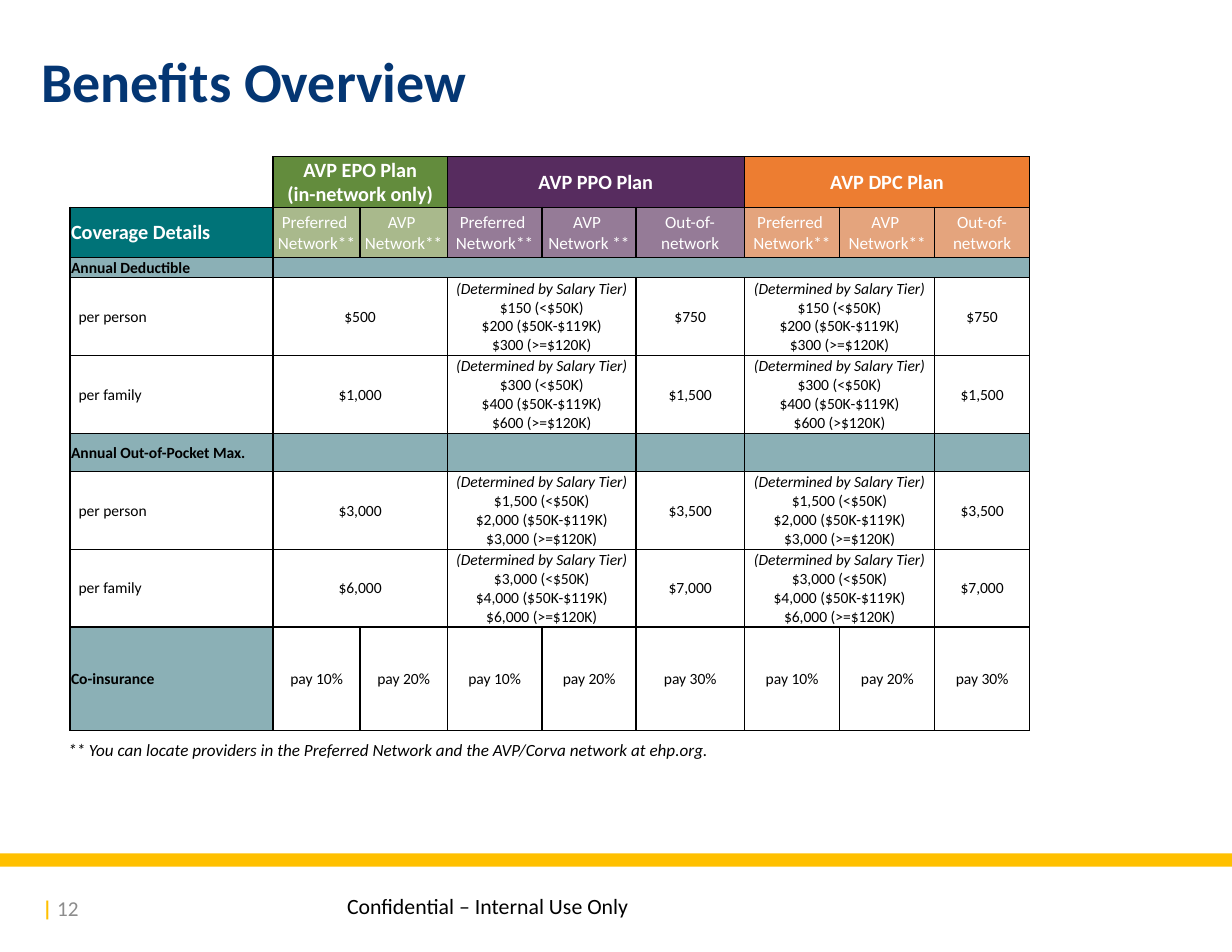
from dataclasses import dataclass

from lxml import etree
from pptx import Presentation
from pptx.dml.color import RGBColor
from pptx.enum.shapes import MSO_SHAPE
from pptx.enum.text import MSO_ANCHOR, PP_ALIGN
from pptx.oxml.ns import qn
from pptx.util import Pt

RECTANGLE = MSO_SHAPE.RECTANGLE
MIDDLE, TOP = MSO_ANCHOR.MIDDLE, MSO_ANCHOR.TOP
LEFT, CENTER = PP_ALIGN.LEFT, PP_ALIGN.CENTER
FONT = "Calibri"
COLORS = {
    "black": "000000", "white": "FFFFFF", "navy": "043673",
    "gold": "FFC000", "gray": "8C8C8C", "teal": "007378",
    "section": "8BB0B6", "epo": "638C3D", "epo_light": "A9B98C",
    "ppo": "572C5F", "ppo_light": "957B97",
    "dpc": "ED7D31", "dpc_light": "E4A47D",
}
COLUMN_WIDTHS = [130.5, 56, 56, 61, 60.5, 69.5, 61.5, 61, 61]
ROW_HEIGHTS = [32.4, 32.4, 13, 50, 50, 24.6, 50, 50, 66.6]
TIER_NOTE = "(Determined by Salary Tier)"
BANDS = ("(<$50K)", "($50K-$119K)", "(>=$120K)")


@dataclass(frozen=True)
class Style:
    size: float
    color: str = "black"
    bold: bool = False
    italic: bool = False


@dataclass(frozen=True)
class Plan:
    name: str
    key: str
    column: int
    networks: tuple[str, ...]
    rates: tuple[str, ...]


@dataclass(frozen=True)
class Benefit:
    row: int
    label: str
    flat: str
    tiers: tuple[str, ...]
    outside: str
    dpc_top_band: str = BANDS[2]


PREFERRED = "Preferred \nNetwork**"
PLAN_NETWORK = "AVP \nNetwork**"
OUTSIDE = "Out-of-network"
PLANS = [
    Plan("AVP EPO Plan\n(in-network only)", "epo", 1,
         (PREFERRED, PLAN_NETWORK), ("10%", "20%")),
    Plan("AVP PPO Plan", "ppo", 3,
         (PREFERRED, "AVP \nNetwork **", OUTSIDE), ("10%", "20%", "30%")),
    Plan("AVP DPC Plan", "dpc", 6,
         (PREFERRED, PLAN_NETWORK, OUTSIDE), ("10%", "20%", "30%")),
]
BENEFITS = [
    Benefit(3, "per person", "$500", ("$150", "$200", "$300"), "$750"),
    Benefit(4, "per family", "$1,000", ("$300", "$400", "$600"), "$1,500",
            "(>$120K)"),
    Benefit(6, "per person", "$3,000", ("$1,500", "$2,000", "$3,000"), "$3,500"),
    Benefit(7, "per family", "$6,000", ("$3,000", "$4,000", "$6,000"), "$7,000"),
]
HEADING = Style(13, "white", bold=True)
SUBHEADING = Style(11, "white")
SECTION = Style(10, bold=True)
BODY = Style(10)
TIER = Style(10, italic=True)


def rgb(name: str) -> RGBColor:
    return RGBColor.from_string(COLORS[name])


def add_text(paragraph, text: str, style: Style) -> None:
    for index, line in enumerate(text.split("\n")):
        if index:
            paragraph.add_line_break()
        run = paragraph.add_run()
        run.text = line
        run.font.name = FONT
        run.font.size = Pt(style.size)
        run.font.bold = style.bold
        run.font.italic = style.italic
        run.font.color.rgb = rgb(style.color)


def add_label(slide, left: float, top: float, width: float, height: float,
              pieces: list[tuple[str, Style]], anchor=TOP, inset: float = 7.2):
    frame = slide.shapes.add_textbox(
        Pt(left), Pt(top), Pt(width), Pt(height)).text_frame
    frame.word_wrap = True
    frame.vertical_anchor = anchor
    frame.margin_left = frame.margin_right = Pt(inset)
    for text, style in pieces:
        add_text(frame.paragraphs[0], text, style)
    return frame.paragraphs[0]


def set_borders(cell, sides: str) -> None:
    properties = cell._tc.get_or_add_tcPr()
    for index, side in enumerate(sides):
        line = etree.Element(qn(f"a:ln{side}"), w=str(Pt(1)))
        fill = etree.SubElement(line, qn("a:solidFill"))
        etree.SubElement(fill, qn("a:srgbClr"), val=COLORS["black"])
        properties.insert(index, line)


def shrink_empty(cell) -> None:
    cell.margin_top = cell.margin_bottom = Pt(0.7)
    paragraph = cell.text_frame.paragraphs[0]._p
    etree.SubElement(paragraph, qn("a:endParaRPr"), sz="1000")


def fill_cell(table, row: int, column: int, lines: list[tuple[str, Style]],
              fill: str = "white", span: int = 1, align=CENTER,
              indent: float = 0.7) -> None:
    cell = table.cell(row, column)
    if span > 1:
        cell.merge(table.cell(row, column + span - 1))
    for offset in range(span):
        part = table.cell(row, column + offset)
        part.fill.solid()
        part.fill.fore_color.rgb = rgb(fill)
        if offset == 0:
            set_borders(part, "LRTB")
        else:
            set_borders(part, "RTB" if offset == span - 1 else "TB")
        if offset or not lines:
            shrink_empty(part)
    cell.vertical_anchor = MIDDLE
    cell.margin_left = Pt(indent)
    cell.margin_right = cell.margin_top = Pt(0.7)
    cell.margin_bottom = Pt(0)
    for index, (text, style) in enumerate(lines):
        frame = cell.text_frame
        paragraph = frame.add_paragraph() if index else frame.paragraphs[0]
        paragraph.alignment = align
        add_text(paragraph, text, style)


def fill_benefit(table, benefit: Benefit) -> None:
    row = benefit.row
    fill_cell(table, row, 0, [(benefit.label, BODY)], align=LEFT, indent=5.5)
    fill_cell(table, row, 1, [(benefit.flat, BODY)], span=2)
    for column, top_band in ((3, BANDS[2]), (6, benefit.dpc_top_band)):
        bands = (*BANDS[:2], top_band)
        tiers = [(f"{amount} {band}", BODY)
                 for amount, band in zip(benefit.tiers, bands)]
        fill_cell(table, row, column, [(TIER_NOTE, TIER), *tiers], span=2)
        fill_cell(table, row, column + 2, [(benefit.outside, BODY)])


def add_coverage_table(slide) -> None:
    table = slide.shapes.add_table(
        len(ROW_HEIGHTS), len(COLUMN_WIDTHS), Pt(45), Pt(100.8),
        Pt(sum(COLUMN_WIDTHS)), Pt(sum(ROW_HEIGHTS))).table
    table.first_row = table.horz_banding = False
    for column, width in zip(table.columns, COLUMN_WIDTHS):
        column.width = Pt(width)
    for row, height in zip(table.rows, ROW_HEIGHTS):
        row.height = Pt(height)

    corner = table.cell(0, 0)
    corner.fill.background()
    set_borders(corner, "RB")
    shrink_empty(corner)

    for plan in PLANS:
        fill_cell(table, 0, plan.column, [(plan.name, HEADING)], plan.key,
                  span=len(plan.networks))
        for offset, (network, rate) in enumerate(zip(plan.networks, plan.rates)):
            column = plan.column + offset
            fill_cell(table, 1, column, [(network, SUBHEADING)],
                      f"{plan.key}_light")
            fill_cell(table, 8, column, [(f"pay {rate}", BODY)])

    fill_cell(table, 1, 0, [("Coverage Details", HEADING)], "teal", align=LEFT)
    for row, title in ((2, "Annual Deductible"), (5, "Annual Out-of-Pocket Max."),
                       (8, "Co-insurance")):
        fill_cell(table, row, 0, [(title, SECTION)], "section", align=LEFT)
    fill_cell(table, 2, 1, [], "section", span=8)
    for column, span in ((1, 2), (3, 2), (5, 1), (6, 2), (8, 1)):
        fill_cell(table, 5, column, [], "section", span=span)
    for benefit in BENEFITS:
        fill_benefit(table, benefit)


def main() -> None:
    deck = Presentation()
    deck.slide_width, deck.slide_height = Pt(792), Pt(612)
    slide = deck.slides.add_slide(deck.slide_layouts[6])

    footer_bar = slide.shapes.add_shape(RECTANGLE, 0, Pt(548.6), Pt(792), Pt(8.6))
    footer_bar.shadow.inherit = False
    footer_bar.fill.solid()
    footer_bar.fill.fore_color.rgb = rgb("gold")
    footer_bar.line.fill.background()

    add_label(slide, 216, 570.2, 202.3, 24.5,
              [("Confidential – Internal Use Only", Style(14))])
    title = add_label(slide, 26.6, 31, 562.3, 85,
                      [("Benefits Overview", Style(36, "navy", bold=True))],
                      inset=0)
    title.line_spacing = 0.9
    add_label(slide, 20.2, 567.4, 244.8, 32.4,
              [("| ", Style(13.6, "gold", bold=True)),
               ("12", Style(13.6, "gray"))], MIDDLE)
    add_coverage_table(slide)
    add_label(slide, 36.7, 471.6, 540, 20.9,
              [("** You can locate providers in the Preferred Network and the "
                "AVP/Corva network at ehp.org.", Style(11, italic=True))])
    deck.save("out.pptx")


if __name__ == "__main__":
    main()
